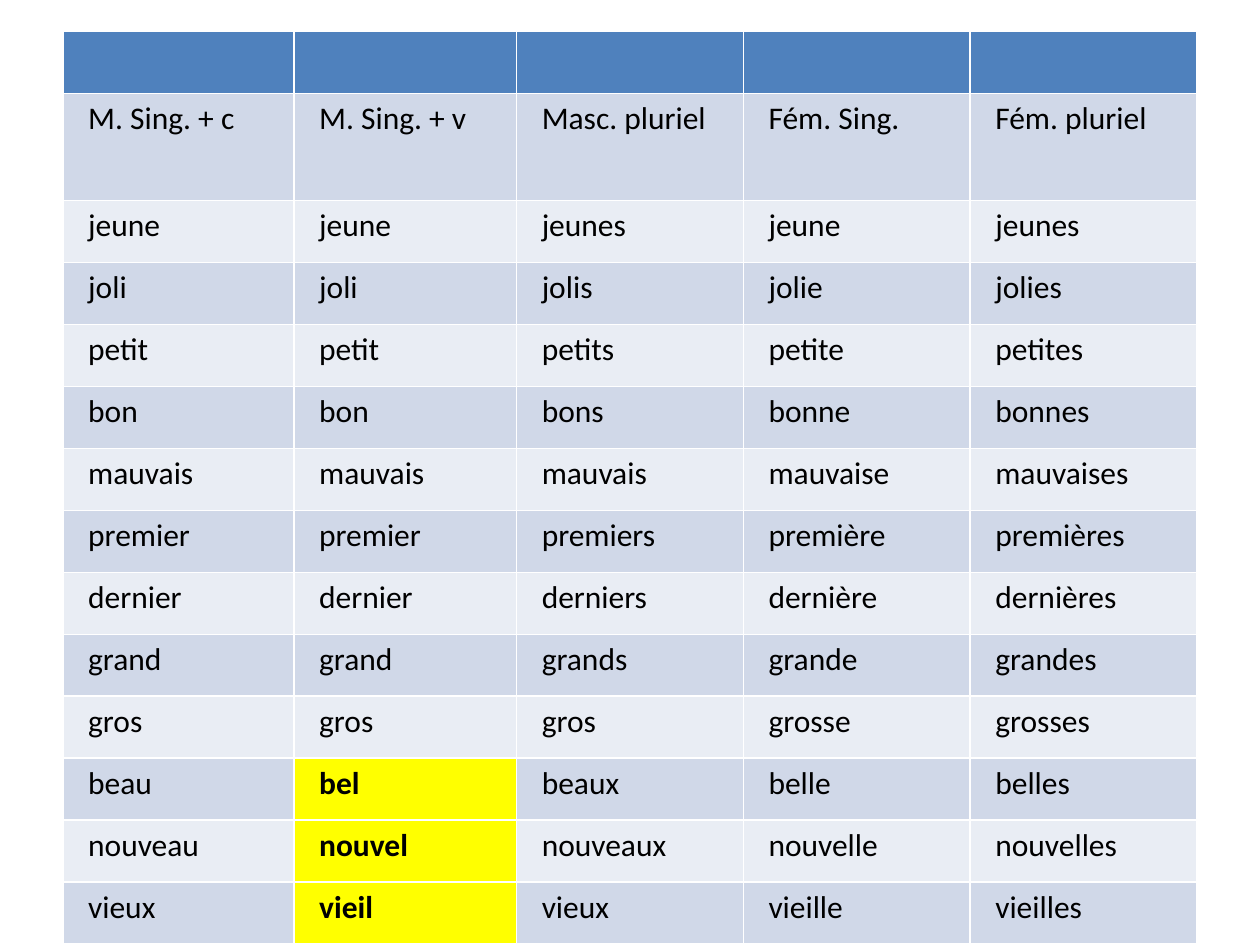
"""Build a slide with a table of French adjective forms."""
import pptx
import pptx.dml.color
import pptx.util

Pt = pptx.util.Pt
RGBColor = pptx.dml.color.RGBColor

BLACK = RGBColor(0x00, 0x00, 0x00)
HEADER_BLUE = RGBColor(0x4F, 0x81, 0xBD)
BAND_DARK = RGBColor(0xD0, 0xD8, 0xE8)
BAND_LIGHT = RGBColor(0xE9, 0xED, 0xF4)
YELLOW = RGBColor(0xFF, 0xFF, 0x00)

COLUMN_WIDTHS = [132, 127.2, 129.6, 129.6, 129.6]
ROW_HEIGHT = 35.43
LABEL_ROW_HEIGHT = 61.2
LABELS = ["M. Sing. + c", "M. Sing. + v", "Masc. pluriel", "Fém. Sing.", "Fém. pluriel"]
ADJECTIVES = [
    "jeune jeune jeunes jeune jeunes",
    "joli joli jolis jolie jolies",
    "petit petit petits petite petites",
    "bon bon bons bonne bonnes",
    "mauvais mauvais mauvais mauvaise mauvaises",
    "premier premier premiers première premières",
    "dernier dernier derniers dernière dernières",
    "grand grand grands grande grandes",
    "gros gros gros grosse grosses",
    "beau bel beaux belle belles",
    "nouveau nouvel nouveaux nouvelle nouvelles",
    "vieux vieil vieux vieille vieilles",
]
SPECIAL_FORMS = {"bel", "nouvel", "vieil"}


def write_text(frame, text, font="Calibri", size=18, color=BLACK, bold=False):
    """Write one formatted span into the first paragraph of a text frame."""
    span = frame.paragraphs[0].add_run()
    span.text = text
    span.font.name = font
    span.font.size = Pt(size)
    span.font.color.rgb = color
    span.font.bold = bold


class AdjectivePage:
    """Hold the table style and the current slide."""

    side_margin = Pt(14.4)
    edge_margin = Pt(3.6)

    def __init__(self, deck):
        """Add a blank page to the deck."""
        self.page = deck.slides.add_slide(deck.slide_layouts[6])

    def add_cell(self, cell, text, fill):
        """Fill a cell and write its text."""
        cell.fill.solid()
        cell.fill.fore_color.rgb = fill
        cell.margin_left = cell.margin_right = self.side_margin
        cell.margin_top = cell.margin_bottom = self.edge_margin
        if text:
            write_text(cell.text_frame, text, bold=text in SPECIAL_FORMS)

    def add_table(self, rows, left, top, widths, heights):
        """Add a banded table with a coloured header row."""
        box = self.page.shapes.add_table(
            len(rows), len(widths), Pt(left), Pt(top), Pt(sum(widths)), Pt(sum(heights)))
        table = box.table
        for column, width in zip(table.columns, widths):
            column.width = Pt(width)
        for index, (row, height, texts) in enumerate(zip(table.rows, heights, rows)):
            row.height = Pt(height)
            band = BAND_DARK if index % 2 else BAND_LIGHT
            if index == 0:
                band = HEADER_BLUE
            for cell, text in zip(row.cells, texts):
                self.add_cell(cell, text, YELLOW if text in SPECIAL_FORMS else band)


def main():
    """Create the deck and save it."""
    deck = pptx.Presentation()
    deck.slide_width, deck.slide_height = Pt(720), Pt(540)
    rows = [[""] * len(LABELS), LABELS] + [line.split() for line in ADJECTIVES]
    heights = [ROW_HEIGHT, LABEL_ROW_HEIGHT] + [ROW_HEIGHT] * len(ADJECTIVES)
    AdjectivePage(deck).add_table(rows, 36, 18, COLUMN_WIDTHS, heights)
    deck.save("out.pptx")


if __name__ == "__main__":
    main()
